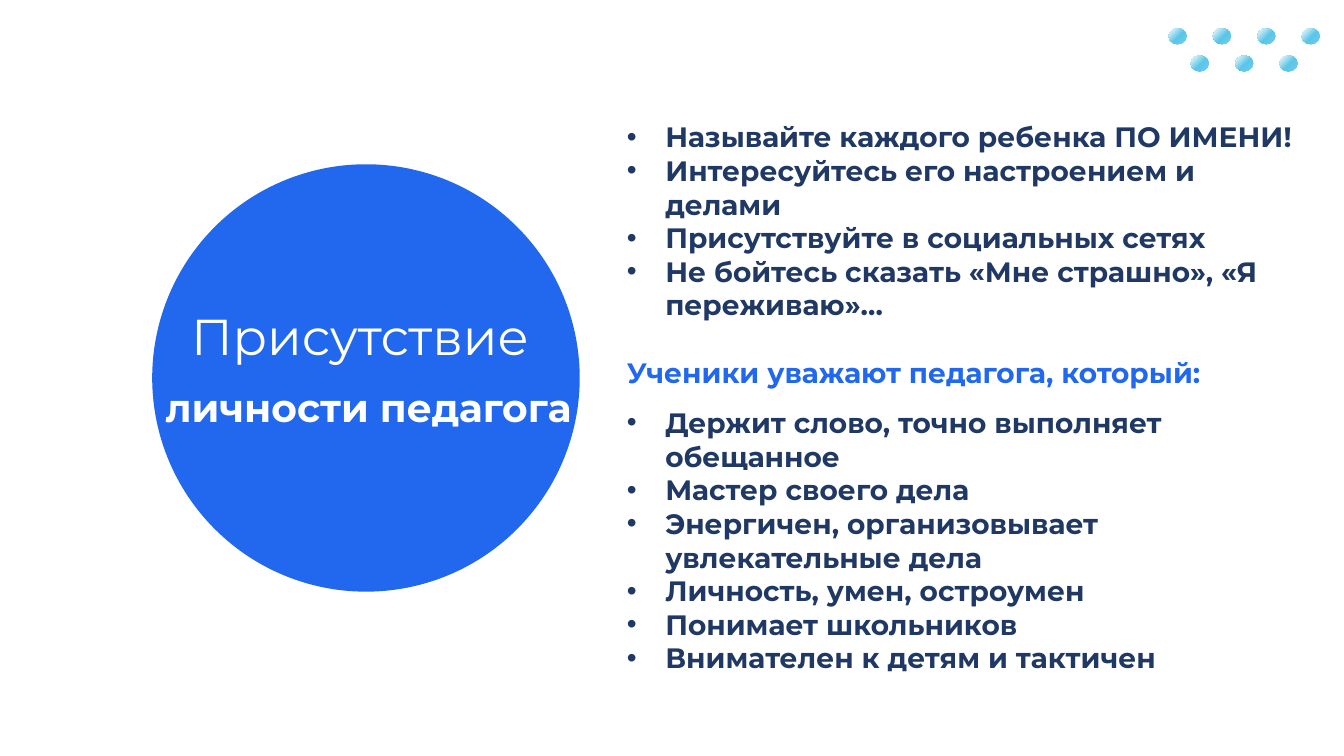
import pptx
import pptx.dml.color
import pptx.enum.shapes
import pptx.enum.text
import pptx.oxml
import pptx.oxml.ns
import pptx.util
from lxml import etree

Inches = pptx.util.Inches
Pt = pptx.util.Pt
ALIGN = pptx.enum.text.PP_ALIGN
ANCHOR = pptx.enum.text.MSO_ANCHOR
OVAL = pptx.enum.shapes.MSO_SHAPE.OVAL

THEME = {
    "font": "Montserrat",
    "blue": "2168EE",
    "navy": "203864",
    "white": "FFFFFF",
    "title": 36,
    "subtitle": 28,
    "body": 20,
    "dot": [(0, "FFFFFF"), (54, "5AC6E8"), (100, "71CDF0")],
}

ADVICE = [
    "Называйте каждого ребенка ПО ИМЕНИ!",
    "Интересуйтесь его настроением и делами",
    "Присутствуйте в социальных сетях",
    "Не бойтесь сказать «Мне страшно», «Я переживаю»…",
]
HEADING = "Ученики уважают педагога, который:"
QUALITIES = [
    "Держит слово, точно выполняет обещанное",
    "Мастер своего дела",
    "Энергичен, организовывает увлекательные дела",
    "Личность, умен, остроумен",
    "Понимает школьников",
    "Внимателен к детям и тактичен",
]


class Builder:
    def __init__(self, s, theme):
        self.s = s
        self.theme = theme

    def apply(self, target, values):
        for name, value in values.items():
            setattr(target, name, value)

    def color(self, name):
        return pptx.dml.color.RGBColor.from_string(self.theme[name])

    def place(self, sp, left, top, width, height):
        self.apply(sp, {"left": Inches(left), "top": Inches(top),
                        "width": Inches(width), "height": Inches(height)})

    def frame(self, sp):
        tf = sp.text_frame
        self.apply(tf, {
            "word_wrap": True, "vertical_anchor": ANCHOR.TOP,
            "auto_size": pptx.enum.text.MSO_AUTO_SIZE.SHAPE_TO_FIT_TEXT,
            "margin_left": Inches(0.1), "margin_right": Inches(0.1),
            "margin_top": Inches(0.05), "margin_bottom": Inches(0.05)})
        return tf

    def add_text(self, p, text, size, color, bold, **layout):
        self.apply(p, layout)
        r = p.add_run()
        r.text = text
        self.apply(r.font, {"name": self.theme["font"], "size": Pt(self.theme[size]),
                            "bold": bold})
        r.font.color.rgb = self.color(color)

    def bullet(self, p):
        pPr = p._p.get_or_add_pPr()
        indent = Inches(0.38)
        pPr.set("marL", str(indent))
        pPr.set("indent", str(-indent))
        for tag, name, value in [("a:buFont", "typeface", "Arial"), ("a:buChar", "char", "•")]:
            etree.SubElement(pPr, pptx.oxml.ns.qn(tag)).set(name, value)

    def label(self, sp, box, text, size, bold):
        self.place(sp, *box)
        p = self.frame(sp).paragraphs[0]
        self.add_text(p, text, size, "white", bold, alignment=ALIGN.CENTER, line_spacing=0.9)

    def title(self, box, text):
        sp = self.s.shapes.title
        self.label(sp, box, text, "title", False)
        return sp

    def textbox(self, box):
        return self.s.shapes.add_textbox(*[Inches(v) for v in box])

    def subtitle(self, box, text):
        self.label(self.textbox(box), box, text, "subtitle", True)

    def sections(self, box, rows):
        tf = self.frame(self.textbox(box))
        for i, (text, color, bulleted, gap) in enumerate(rows):
            p = tf.add_paragraph() if i else tf.paragraphs[0]
            self.add_text(p, text, "body", color, True, space_before=Pt(gap))
            if bulleted:
                self.bullet(p)

    def oval(self, shapes, box):
        sp = shapes.add_shape(OVAL, *[Inches(v) for v in box])
        sp.shadow.inherit = False
        sp.line.fill.background()
        return sp

    def disc(self, box):
        sp = self.oval(self.s.shapes, box)
        sp.fill.solid()
        sp.fill.fore_color.rgb = self.color("blue")
        return sp

    def dot(self, shapes, box):
        sp = self.oval(shapes, box)
        stops = "".join(f'<a:gs pos="{pos * 1000}"><a:srgbClr val="{rgb}"/></a:gs>'
                        for pos, rgb in self.theme["dot"])
        grad = pptx.oxml.parse_xml(
            f'<a:gradFill {pptx.oxml.ns.nsdecls("a")}><a:gsLst>{stops}</a:gsLst>'
            '<a:path path="circle"><a:fillToRect r="100000" b="100000"/></a:path></a:gradFill>')
        sp.element.spPr.find(pptx.oxml.ns.qn("a:prstGeom")).addnext(grad)

    def dots(self, left, top, step, drop, counts):
        group = self.s.shapes.add_group_shape()
        for row, count in enumerate(counts):
            for col in range(count):
                x = left + step * (col + row / 2)
                self.dot(group.shapes, (x, top + drop * row, 0.18, 0.16))


def main():
    prs = pptx.Presentation()
    prs.slide_width, prs.slide_height = Inches(13.33), Inches(7.5)
    b = Builder(prs.slides.add_slide(prs.slide_layouts[5]), THEME)
    disc = b.disc((1.51, 1.63, 4.24, 4.24))
    title = b.title((1.51, 3.04, 4.12, 0.65), "Присутствие")
    disc.element.addnext(title.element)
    rows = [(text, "navy", True, 0) for text in ADVICE]
    rows.append((HEADING, "blue", False, 24))
    rows += [(text, "navy", True, 0 if i else 12) for i, text in enumerate(QUALITIES)]
    b.sections((6.12, 1.14, 6.96, 6.5), rows)
    b.subtitle((1.44, 3.81, 4.43, 0.53), "личности педагога")
    b.dots(11.59, 0.28, 0.44, 0.27, (4, 3))
    prs.save("out.pptx")


if __name__ == "__main__":
    main()
